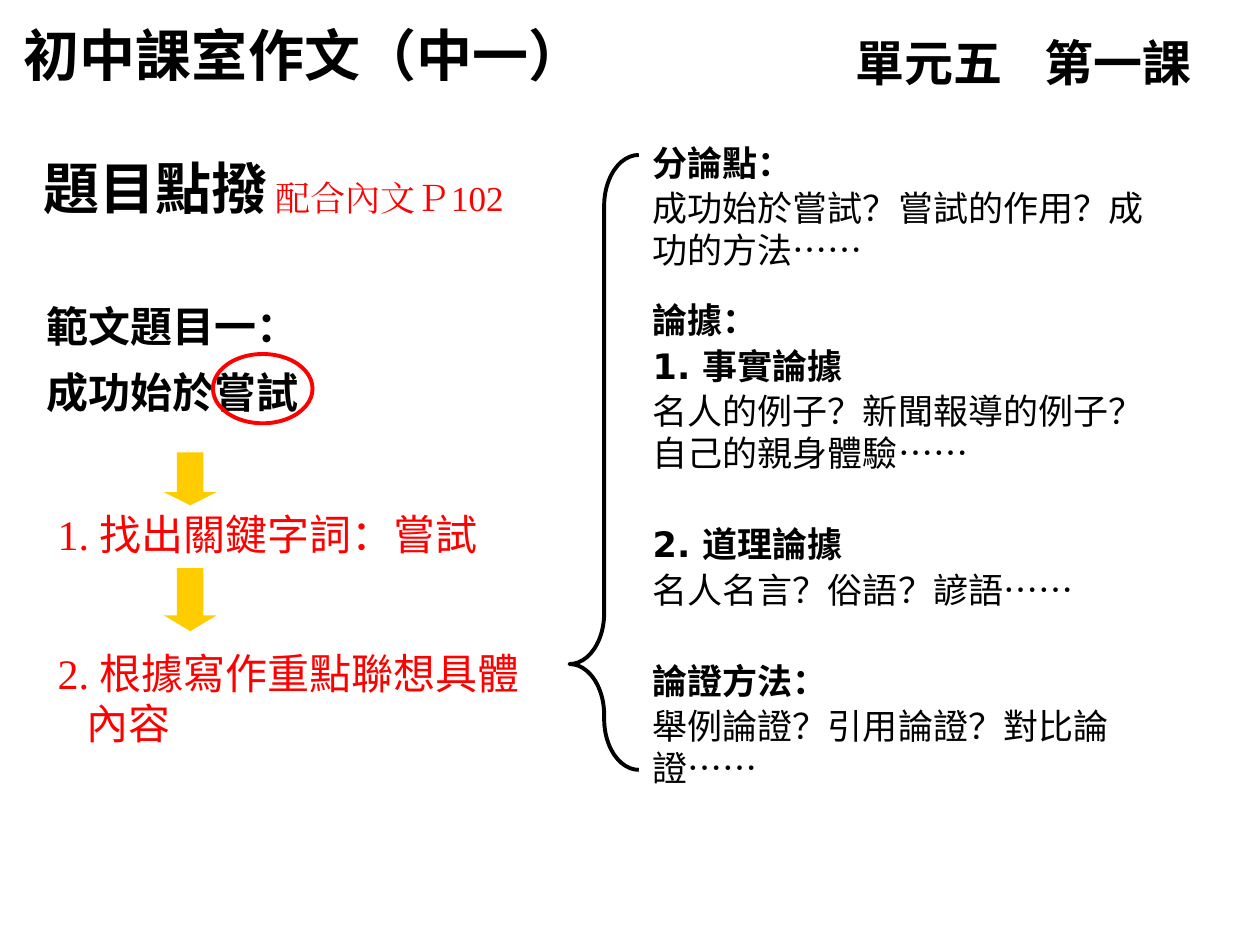
from pptx import Presentation
from pptx.dml.color import RGBColor
from pptx.enum.shapes import MSO_SHAPE as Shape
from pptx.enum.text import MSO_ANCHOR as Anchor, MSO_AUTO_SIZE as Fit, PP_ALIGN as Align
from pptx.oxml.xmlchemy import OxmlElement as Element
from pptx.util import Inches, Pt

SANS, SERIF, CJK = "DejaVu Sans", "Times New Roman", "Noto Sans CJK SC"
BLACK, RED, GOLD = "000000", "FF0000", "FFCC00"


def rgb(code):
    return RGBColor.from_string(code)


def write(box, at, paras, size, color=BLACK, bold=False, line=1.0, hang=0, tab=None):
    """Place a box; each para is (space before, [(text, font, bold or None)])."""
    box.left, box.top, box.width, box.height = map(Inches, at)
    frame = box.text_frame
    frame.word_wrap = True
    frame.auto_size = Fit.NONE
    frame.vertical_anchor = Anchor.TOP
    for i, (gap, runs) in enumerate(paras):
        para = frame.paragraphs[0] if i == 0 else frame.add_paragraph()
        para.alignment = Align.LEFT
        para.line_spacing = line
        para.space_before = Pt(gap)
        para.space_after = Pt(0)
        props = para._p.get_or_add_pPr()
        props.set("marL", str(Inches(hang)))
        props.set("indent", str(Inches(-hang)))
        props.append(Element("a:buNone"))
        if tab:
            stops = Element("a:tabLst")
            stop = Element("a:tab")
            stop.set("pos", str(Inches(tab)))
            stop.set("algn", "l")
            stops.append(stop)
            props.append(stops)
        for text, face, heavy in runs:
            run = para.add_run()
            run.text = text
            font = run.font
            font.size = Pt(size)
            font.bold = bold if heavy is None else heavy
            font.color.rgb = rgb(color)
            font.name = face
            east = Element("a:ea")
            east.set("typeface", face)
            font._element.append(east)


prs = Presentation()
prs.slide_width, prs.slide_height = Inches(10), Inches(7.5)
slide = prs.slides.add_slide(prs.slide_layouts[1])
shapes = slide.shapes
title, body = slide.placeholders

# Headings
write(title, (0.09, 0.11, 5.22, 0.63),
      [(0, [("初中課室作文（中一）", "Roboto", None)])], 32, bold=True)
labels = [
    ((6.69, 0.21, 3.35, 0.57), "單元五\t第一課", "Roboto", 28, BLACK, True, 1.36),
    ((0.25, 1.17, 3.08, 0.63), "題目點撥", "Arial", 32, BLACK, True, None),
    ((2.09, 1.35, 2.47, 0.43), "配合內文Ｐ102", SERIF, 20, RED, False, None),
]
for at, text, face, size, color, bold, tab in labels:
    write(shapes.add_textbox(0, 0, 0, 0), at, [(0, [(text, face, None)])],
          size, color, bold, tab=tab)

# Topic and steps
topic = [(0, [(text, SANS, None)]) for text in ("範文題目一：", "成功始於嘗試")]
write(shapes.add_textbox(0, 0, 0, 0), (0.27, 2.22, 5, 1.14), topic, 24,
      bold=True, line=1.3)
steps = [
    ((0.36, 3.99, 4.25, 0.5), "1. ", "找出關鍵字詞：嘗試"),
    ((0.36, 5.09, 4.17, 0.9), "2. ", "根據寫作重點聯想具體內容"),
]
for at, mark, text in steps:
    write(shapes.add_textbox(0, 0, 0, 0), at,
          [(0, [(mark, SERIF, None), (text, SANS, None)])], 24, RED, hang=0.23)

# Argument outline: space before, text, font, heading or not
outline = [
    (0, "分論點：", SANS, True),
    (2, "成功始於嘗試？嘗試的作用？成功的方法", SANS, False),
    (16, "論據：", SANS, True),
    (2, "1. 事實論據", SANS, True),
    (2, "名人的例子？新聞報導的例子？自己的親身體驗", SANS, False),
    (28, "2. 道理論據", SANS, True),
    (2, "名人名言？俗語？諺語", "Arial", False),
    (28, "論證方法：", SANS, True),
    (2, "舉例論證？引用論證？對比論證", "Arial", False),
]
paras = []
for gap, text, face, head in outline:
    dots = [] if head else [("……", CJK, False)]
    paras.append((gap, [(text, face, head)] + dots))
write(body, (5.08, 1.07, 4.17, 5.31), paras, 20)

# Ring around the key word, arrows between steps, brace before the outline
figures = [
    (Shape.OVAL, (1.69, 2.81, 0.79, 0.55), [], None, RED),
    (Shape.DOWN_ARROW, (1.3, 3.59, 0.42, 0.42), [0.5, 0.25], GOLD, None),
    (Shape.DOWN_ARROW, (1.3, 4.51, 0.42, 0.5), [0.5, 0.3], GOLD, None),
    (Shape.LEFT_BRACE, (4.52, 1.23, 0.55, 4.88), [0.735, 0.828], None, BLACK),
]
for kind, at, adjust, fill, line in figures:
    shape = shapes.add_shape(kind, *map(Inches, at))
    shape.shadow.inherit = False
    for i, value in enumerate(adjust):
        shape.adjustments[i] = value
    if fill:
        shape.fill.solid()
        shape.fill.fore_color.rgb = rgb(fill)
    else:
        shape.fill.background()
    if line:
        shape.line.color.rgb = rgb(line)
        shape.line.width = Pt(2.25)
    else:
        shape.line.fill.background()

prs.save("out.pptx")
